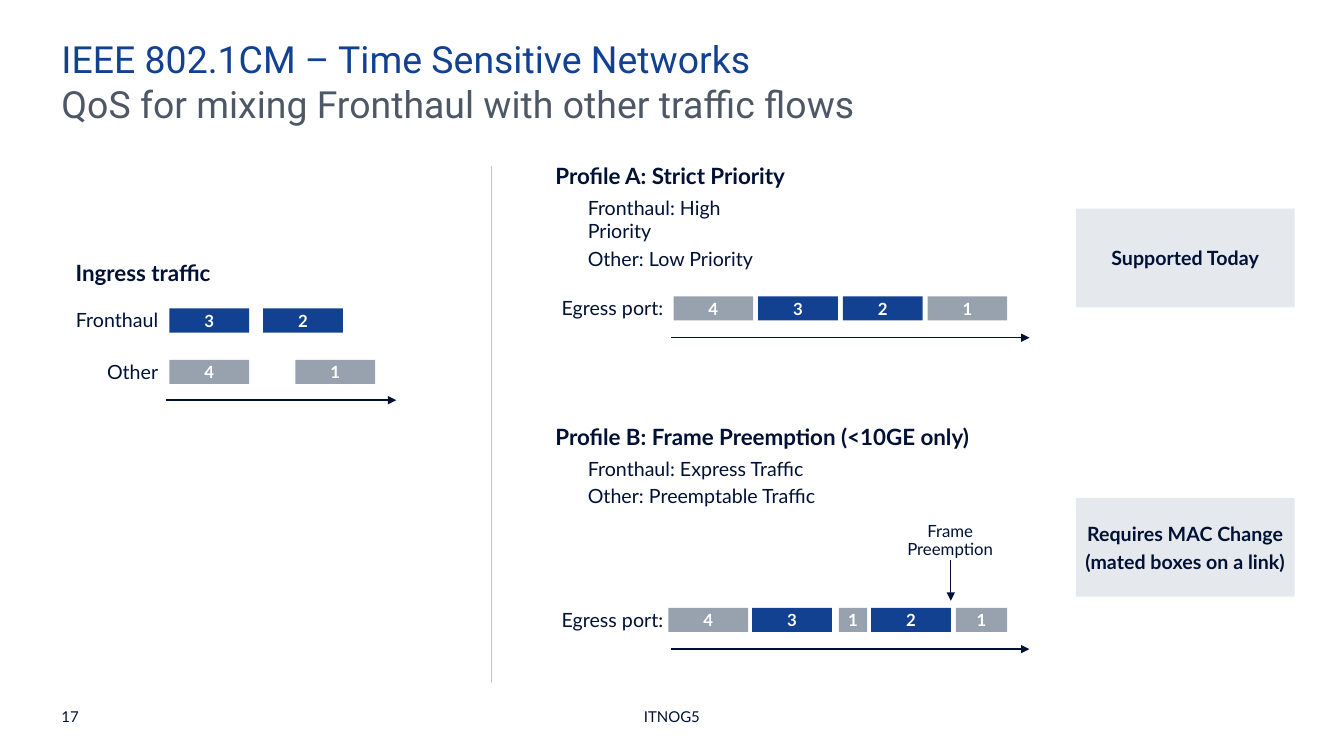
from dataclasses import dataclass

import pptx
import pptx.dml.color
import pptx.enum.shapes
import pptx.enum.text
import pptx.oxml
import pptx.oxml.ns
import pptx.util

Inches = pptx.util.Inches
ALIGN = pptx.enum.text.PP_ALIGN
ANCHOR = pptx.enum.text.MSO_ANCHOR


@dataclass(frozen=True)
class Theme:
    navy: str = "001135"
    blue: str = "124191"
    slate: str = "4D5766"
    grey: str = "98A2AE"
    pale: str = "E5E9ED"
    rule: str = "BEC8D2"
    white: str = "FFFFFF"
    body_font: str = "Lato"
    title_font: str = "Roboto"
    title: float = 26.7
    heading: float = 16
    label: float = 14
    packet: float = 12
    footer: float = 10.7


def rgb(value):
    return pptx.dml.color.RGBColor.from_string(value)


def set_values(target, values):
    for name, value in values.items():
        setattr(target, name, value)


class TrafficSlide:
    def __init__(self, slide, theme):
        self.slide = slide
        self.theme = theme

    def put_text(self, shape, lines, size, color=None, bold=False, font=None,
                 align=ALIGN.LEFT, anchor=ANCHOR.TOP, inset=0.08, wrap=False,
                 after=3, spacing=1.0):
        frame = shape.text_frame
        margin = Inches(inset)
        set_values(frame, {
            "text": "\n".join(lines),
            "auto_size": pptx.enum.text.MSO_AUTO_SIZE.NONE,
            "word_wrap": wrap, "vertical_anchor": anchor,
            "margin_left": margin, "margin_right": margin,
            "margin_top": margin, "margin_bottom": margin,
        })
        for paragraph in frame.paragraphs:
            set_values(paragraph, {
                "alignment": align, "line_spacing": spacing,
                "space_before": pptx.util.Pt(0),
                "space_after": pptx.util.Pt(after),
            })
            for run in paragraph.runs:
                set_values(run.font, {
                    "name": font or self.theme.body_font,
                    "size": pptx.util.Pt(size), "bold": bold,
                })
                run.font.color.rgb = rgb(color or self.theme.navy)

    def title(self, left, top, width, height, text, **style):
        placeholder = self.slide.shapes.title
        set_values(placeholder, {
            "left": Inches(left), "top": Inches(top),
            "width": Inches(width), "height": Inches(height),
        })
        self.put_text(placeholder, [text], **style)

    def text(self, left, top, width, height, *lines, **style):
        box = self.slide.shapes.add_textbox(*map(Inches, (left, top, width, height)))
        self.put_text(box, lines, **style)

    def heading(self, left, top, width, text):
        self.text(left, top, width, 0.43, text, size=self.theme.heading, bold=True)

    def row_label(self, right, top, width, text):
        self.text(right - width, top, width, 0.39, text, size=self.theme.label,
                  align=ALIGN.RIGHT, anchor=ANCHOR.MIDDLE)

    def block(self, left, top, width, height, fill):
        shape = self.slide.shapes.add_shape(
            pptx.enum.shapes.MSO_SHAPE.RECTANGLE,
            *map(Inches, (left, top, width, height)))
        shape.shadow.inherit = False
        shape.fill.solid()
        shape.fill.fore_color.rgb = rgb(fill)
        shape.line.fill.background()
        return shape

    def packet(self, left, top, number, fill, width=0.79):
        self.put_text(self.block(left, top, width, 0.24, fill), [number],
                      size=self.theme.packet, color=self.theme.white, bold=True,
                      align=ALIGN.CENTER, anchor=ANCHOR.MIDDLE, wrap=True)

    def verdict(self, top, *lines):
        left, width, height = 10.67, 2.17, 0.98
        self.put_text(self.block(left, top, width, height, self.theme.pale), lines,
                      size=self.theme.label, bold=True, align=ALIGN.CENTER,
                      anchor=ANCHOR.MIDDLE)

    def line(self, x1, y1, x2, y2, color, weight, arrow=False):
        connector = self.slide.shapes.add_connector(
            pptx.enum.shapes.MSO_CONNECTOR.STRAIGHT,
            *map(Inches, (x1, y1, x2, y2)))
        connector.line.color.rgb = rgb(color)
        connector.line.width = pptx.util.Pt(weight)
        properties = connector.element.spPr
        namespace = pptx.oxml.ns.nsdecls("a")
        if arrow:
            properties.find(pptx.oxml.ns.qn("a:ln")).append(
                pptx.oxml.parse_xml(f'<a:tailEnd {namespace} type="triangle"/>'))
        properties.append(pptx.oxml.parse_xml(f"<a:effectLst {namespace}/>"))

    def arrow(self, x1, y1, x2, y2):
        self.line(x1, y1, x2, y2, self.theme.navy, 1, arrow=True)


def main():
    deck = pptx.Presentation()
    set_values(deck, {"slide_width": Inches(13.33), "slide_height": Inches(7.5)})
    theme = Theme()
    page = TrafficSlide(deck.slides.add_slide(deck.slide_layouts[5]), theme)
    fronthaul, other = theme.blue, theme.grey

    # Title and subtitle
    title_style = {"size": theme.title, "font": theme.title_font, "inset": 0,
                   "wrap": True, "after": 0, "spacing": 0.9}
    page.title(0.61, 0.41, 12.12, 0.45, "IEEE 802.1CM – Time Sensitive Networks",
               color=theme.blue, **title_style)
    page.text(0.61, 0.86, 12.12, 0.45,
              "QoS for mixing Fronthaul with other traffic flows",
              color=theme.slate, **title_style)

    # Divider between ingress and egress
    page.line(4.87, 1.65, 4.87, 6.78, theme.rule, 0.25)

    # Ingress traffic
    page.heading(0.67, 2.49, 1.6, "Ingress traffic")
    for name, width, top, fill, packets in (
            ("Fronthaul", 0.99, 3.06, fronthaul, ((1.68, "3"), (2.61, "2"))),
            ("Other", 0.67, 3.57, other, ((1.68, "4"), (2.93, "1")))):
        page.row_label(1.65, top - 0.08, width, name)
        for left, number in packets:
            page.packet(left, top, number, fill)
    page.arrow(1.65, 3.97, 3.93, 3.97)

    # Egress profiles: heading, classes, packets on the port
    profiles = (
        (1.53, "Profile A: Strict Priority", 2.0,
         ("Fronthaul: High Priority", "Other: Low Priority"), 2.94,
         ((6.68, "4", other, 0.79), (7.52, "3", fronthaul, 0.79),
          (8.36, "2", fronthaul, 0.79), (9.2, "1", other, 0.79))),
        (4.12, "Profile B: Frame Preemption (<10GE only)", 2.51,
         ("Fronthaul: Express Traffic", "Other: Preemptable Traffic"), 6.03,
         ((6.63, "4", other, 0.79), (7.46, "3", fronthaul, 0.79),
          (8.32, "1", other, 0.28), (8.64, "2", fronthaul, 0.79),
          (9.48, "1", other, 0.51))),
    )
    for top, heading, width, classes, port_top, packets in profiles:
        page.heading(5.43, top, 4.4, heading)
        page.text(5.75, top + 0.33, width, 0.67, *classes,
                  size=theme.label, wrap=True)
        page.row_label(6.66, port_top - 0.08, 1.2, "Egress port:")
        for left, number, fill, packet_width in packets:
            page.packet(left, port_top, number, fill, packet_width)
        page.arrow(6.66, port_top + 0.41, 10.21, port_top + 0.41)

    # Preemption callout
    page.text(8.91, 5.11, 1.03, 0.52, "Frame", "Preemption", size=theme.packet,
              align=ALIGN.CENTER, after=0, spacing=0.9)
    page.arrow(9.43, 5.56, 9.43, 5.96)

    # Verdicts
    page.verdict(2.07, "Supported Today")
    page.verdict(4.94, "Requires MAC Change", "(mated boxes on a link)")

    # Footer
    footer_style = {"size": theme.footer, "inset": 0, "after": 0}
    page.text(0.61, 7.02, 0.37, 0.18, "17", anchor=ANCHOR.BOTTOM, **footer_style)
    page.text(3.36, 7.02, 6.61, 0.18, "ITNOG5", align=ALIGN.CENTER,
              anchor=ANCHOR.MIDDLE, **footer_style)

    deck.save("out.pptx")


if __name__ == "__main__":
    main()
